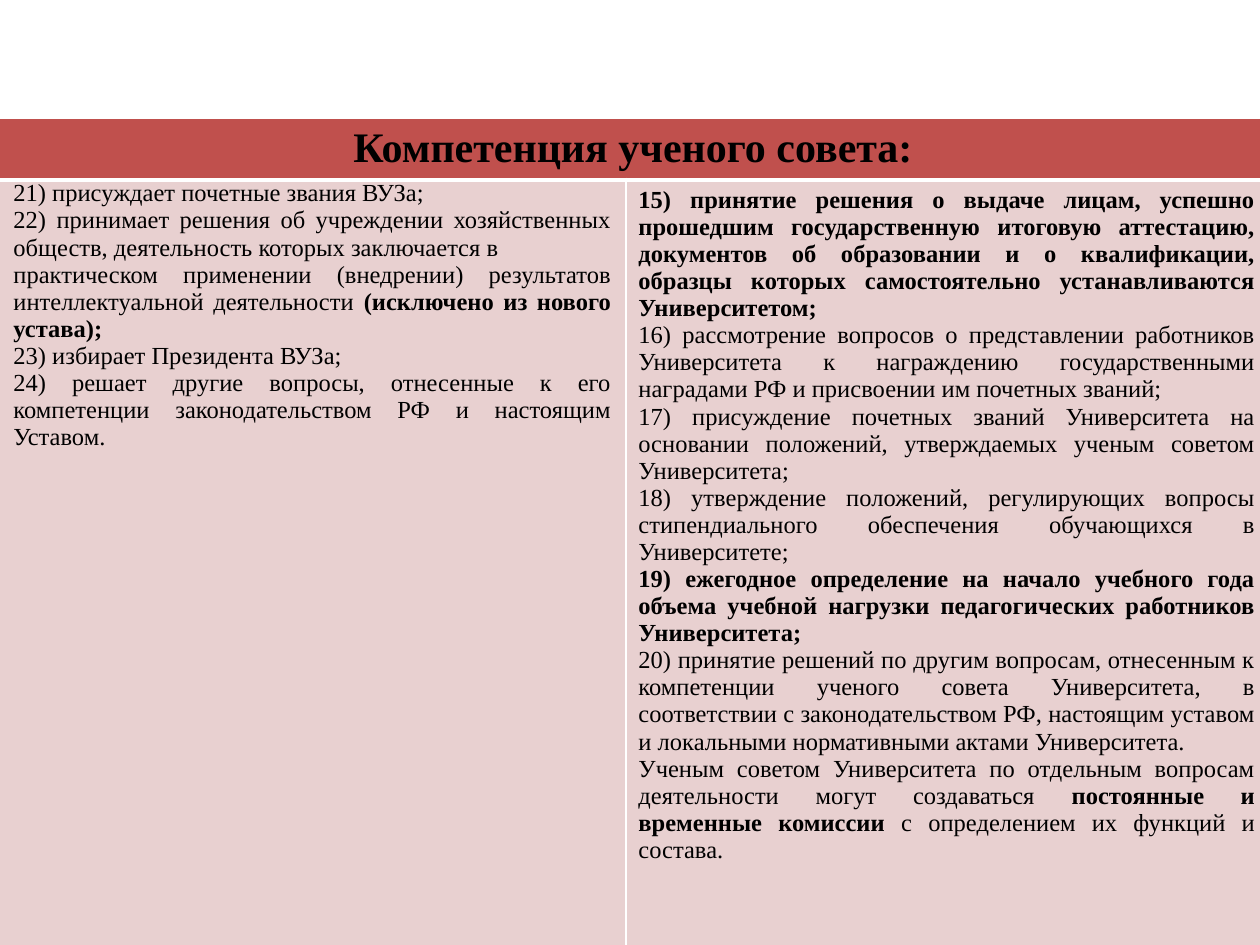
from dataclasses import dataclass

from lxml import etree
from pptx import Presentation
from pptx import util as u
from pptx.dml.color import RGBColor
from pptx.enum import text
from pptx.oxml.ns import qn

FONT = "Times New Roman"


@dataclass
class Run:
    words: str
    bold: bool = False


@dataclass
class Block:
    row: int
    col: int
    fill: str
    size: int
    align: text.PP_ALIGN
    paras: list[list[Run]]
    top: float = 1
    base: float = 1
    side: float = 0.25
    head: float = 0.13


def paint(fill, code: str) -> None:
    fill.solid()
    fill.fore_color.rgb = RGBColor.from_string(code)


def edge(cell, sides: dict[str, float]) -> None:
    props = cell._tc.get_or_add_tcPr()
    for spot, (side, width) in enumerate(sides.items()):
        line = etree.Element(qn(f"a:ln{side}"), w=str(u.Pt(width)))
        solid = etree.SubElement(line, qn("a:solidFill"))
        etree.SubElement(solid, qn("a:srgbClr"), val="FFFFFF")
        props.insert(spot, line)


def write(table, block: Block) -> None:
    cell = table.cell(block.row, block.col)
    paint(cell.fill, block.fill)
    edge(cell, {"L": 1, "R": 1, "T": block.top, "B": block.base})
    cell.margin_left = cell.margin_right = u.Cm(block.side)
    cell.margin_top = cell.margin_bottom = u.Cm(block.head)
    frame = cell.text_frame
    for spot, runs in enumerate(block.paras):
        para = frame.add_paragraph() if spot else frame.paragraphs[0]
        para.alignment = block.align
        for part in runs:
            run = para.add_run()
            run.text = part.words
            run.font.name = FONT
            run.font.size = u.Pt(block.size)
            run.font.bold = part.bold
            paint(run.font.fill, "000000")


TITLE = [[Run("Компетенция ученого совета:", True)]]
LEFT = [
    [Run("21) присуждает почетные звания ВУЗа;")],
    [Run("22) принимает решения об учреждении хозяйственных обществ, "
         "деятельность которых заключается в")],
    [Run("практическом применении (внедрении) результатов "
         "интеллектуальной деятельности "),
     Run("(исключено из нового устава);", True)],
    [Run("23) избирает Президента ВУЗа;")],
    [Run("24) решает другие вопросы, отнесенные к его компетенции "
         "законодательством РФ и настоящим Уставом.")],
]
RIGHT = [
    [Run("15) принятие решения о выдаче лицам, успешно прошедшим "
         "государственную итоговую аттестацию, документов об образовании "
         "и о квалификации, образцы которых самостоятельно "
         "устанавливаются Университетом;", True)],
    [Run("16) рассмотрение вопросов о представлении работников "
         "Университета к награждению государственными наградами РФ "
         "и присвоении им почетных званий;")],
    [Run("17) присуждение почетных званий Университета на основании "
         "положений, утверждаемых ученым советом Университета;")],
    [Run("18) утверждение положений, регулирующих вопросы "
         "стипендиального обеспечения обучающихся в Университете;")],
    [Run("19) ежегодное определение на начало учебного года объема "
         "учебной нагрузки педагогических работников Университета;", True)],
    [Run("20) принятие решений по другим вопросам, отнесенным к "
         "компетенции ученого совета Университета, в соответствии с "
         "законодательством РФ, настоящим уставом и локальными "
         "нормативными актами Университета.")],
    [Run("Ученым советом Университета по отдельным вопросам "
         "деятельности могут создаваться "),
     Run("постоянные и временные комиссии", True),
     Run(" с определением их функций и состава.")],
]


def main() -> None:
    deck = Presentation()
    deck.slide_width, deck.slide_height = u.Cm(25.4), u.Cm(19.05)
    slide = deck.slides.add_slide(deck.slide_layouts[6])
    cols, rows = (12.65, 12.93), (1.24, 15.47)
    table = slide.shapes.add_table(
        len(rows), len(cols), u.Cm(-0.03), u.Cm(2.39),
        u.Cm(sum(cols)), u.Cm(sum(rows))).table
    for col, width in zip(table.columns, cols):
        col.width = u.Cm(width)
    for row, height in zip(table.rows, rows):
        row.height = u.Cm(height)
    table.cell(0, 0).merge(table.cell(0, 1))
    just = text.PP_ALIGN.JUSTIFY
    for block in (
        Block(0, 0, "C0504D", 24, text.PP_ALIGN.CENTER, TITLE, base=3),
        Block(1, 0, "E8D0D0", 14, just, LEFT, top=3, side=0.3, head=0),
        Block(1, 1, "E8D0D0", 14, just, RIGHT, top=3),
    ):
        write(table, block)
    deck.save("out.pptx")


if __name__ == "__main__":
    main()
